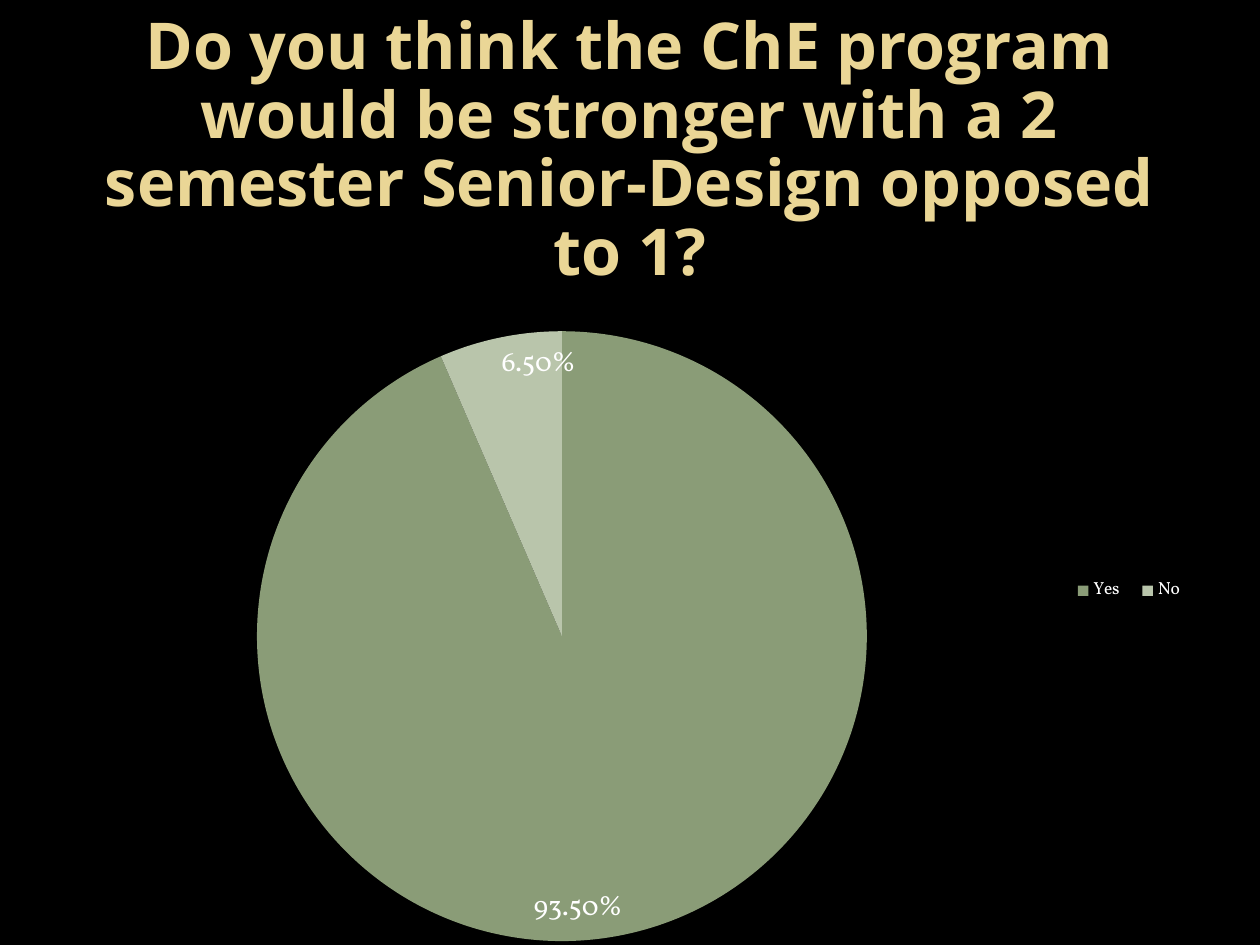
"""Build a survey slide with a question and a pie chart of the answers."""
from pptx import Presentation
from pptx.chart.data import CategoryChartData
from pptx.dml.color import RGBColor
from pptx.enum.chart import XL_CHART_TYPE as ChartType
from pptx.enum.chart import XL_LABEL_POSITION as LabelPos
from pptx.enum.chart import XL_LEGEND_POSITION as LegendPos
from pptx.enum.text import MSO_ANCHOR, PP_ALIGN
from pptx.oxml import parse_xml
from pptx.oxml.ns import nsdecls
from pptx.util import Inches, Pt

BLACK = RGBColor(0x00, 0x00, 0x00)
WHITE = RGBColor(0xFF, 0xFF, 0xFF)
GOLD = RGBColor(0xEA, 0xD6, 0x96)
SAGE = RGBColor(0x8A, 0x9C, 0x77)
PALE_SAGE = RGBColor(0xB9, 0xC5, 0xAB)

WIDTH, HEIGHT = Inches(10), Inches(7.5)
MARGIN = Inches(0.5)
QUESTION = ("Do you think the ChE program would be stronger with a 2 semester "
            "Senior-Design opposed to 1?")
ANSWERS = {"Yes": (0.935, SAGE), "No": (0.065, PALE_SAGE)}


def set_font(font, color, **values):
    """Apply a colour and a set of format values to a font."""
    font.color.rgb = color
    for name, value in values.items():
        setattr(font, name, value)


def add_title(s, text):
    """Place and format the title placeholder."""
    sp = s.shapes.title
    sp.left, sp.top = MARGIN, Inches(0.58)
    sp.width, sp.height = WIDTH - 2 * MARGIN, Inches(1.25)
    tf = sp.text_frame
    tf.word_wrap = True
    tf.vertical_anchor = MSO_ANCHOR.MIDDLE
    p = tf.paragraphs[0]
    p.alignment = PP_ALIGN.CENTER
    p.line_spacing = 0.89
    r = p.add_run()
    r.text = text
    set_font(r.font, GOLD, name="Open Sans", size=Pt(36.9), bold=True)


def set_layout(parent, before, inner=False, **box):
    """Give a chart part a manual layout in shares of the chart."""
    for old in parent.findall(parent.tag.split("}")[0] + "}layout"):
        parent.remove(old)
    target = '<c:layoutTarget val="inner"/>' if inner else ""
    modes = "".join(f'<c:{k}Mode val="edge"/>' for k in "xy")
    sizes = "".join(f'<c:{k} val="{v}"/>' for k, v in box.items())
    before.addprevious(parse_xml(
        f'<c:layout {nsdecls("c")}><c:manualLayout>{target}{modes}{sizes}'
        "</c:manualLayout></c:layout>"))


def add_pie(s, answers):
    """Add the pie chart with its labels and legend."""
    data = CategoryChartData(number_format="0.00%")
    data.categories = list(answers)
    data.add_series("Series 1", [value for value, _ in answers.values()])
    chart = s.shapes.add_chart(ChartType.PIE, MARGIN, Inches(2.32),
                               WIDTH - 2 * MARGIN, Inches(5.15), data).chart
    set_font(chart.font, WHITE, name="Vollkorn", size=Pt(10))
    chart.has_title = False
    plot = chart.plots[0]
    plot.vary_by_categories = True
    for i, (_, color) in enumerate(answers.values()):
        fill = plot.series[0].points[i].format.fill
        fill.solid()
        fill.fore_color.rgb = color
    plot.has_data_labels = True
    labels = plot.data_labels
    values = {"show_value": True, "show_percentage": False,
              "number_format": "0.00%", "number_format_is_linked": False,
              "position": LabelPos.INSIDE_END}
    for name, value in values.items():
        setattr(labels, name, value)
    set_font(labels.font, WHITE, name="Vollkorn", size=Pt(16))
    chart.has_legend = True
    chart.legend.position = LegendPos.RIGHT
    chart.legend.include_in_layout = False
    area = chart.element.chart.plotArea
    set_layout(area, area.find(plot._element.tag), inner=True,
               x=0, y=0.06, w=0.88, h=0.94)
    legend = chart.legend._element
    set_layout(legend, legend.find(legend.tag.replace("legend", "overlay")),
               x=0.88, y=0.43, w=0.12, h=0.06)


def main():
    """Build the slide and save it."""
    prs = Presentation()
    prs.slide_width, prs.slide_height = WIDTH, HEIGHT
    s = prs.slides.add_slide(prs.slide_layouts[5])
    s.background.fill.solid()
    s.background.fill.fore_color.rgb = BLACK
    add_title(s, QUESTION)
    add_pie(s, ANSWERS)
    prs.save("out.pptx")


if __name__ == "__main__":
    main()
